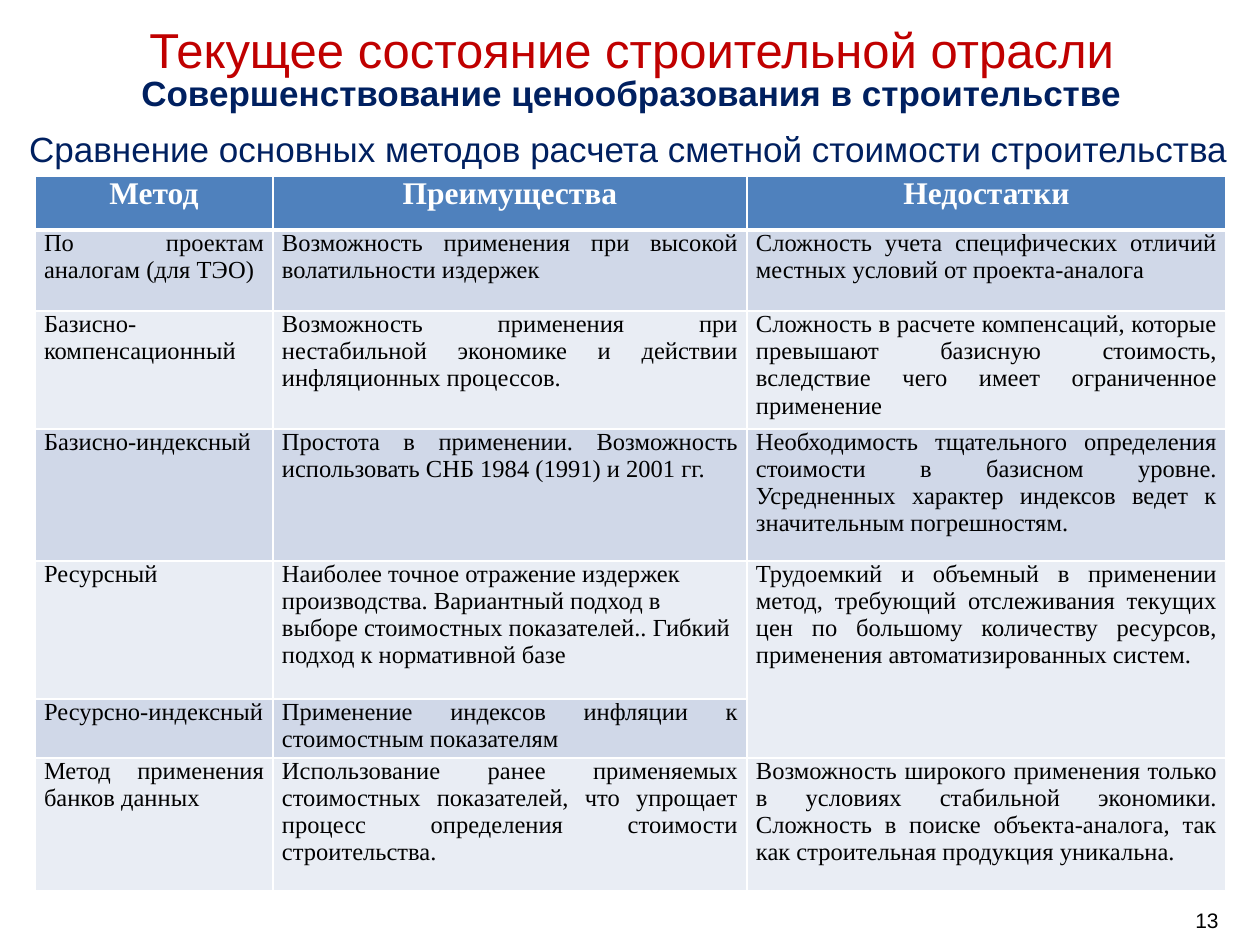
from lxml.etree import SubElement
from pptx import Presentation
from pptx.dml.color import RGBColor
from pptx.enum.text import MSO_ANCHOR, PP_ALIGN
from pptx.oxml.ns import qn
from pptx.util import Emu, Pt

SCALE = 914400 / 126  # EMU in one px

WHITE = RGBColor(0xFF, 0xFF, 0xFF)
BLACK = RGBColor(0x00, 0x00, 0x00)
RED = RGBColor(0xC0, 0x00, 0x00)
NAVY = RGBColor(0x00, 0x20, 0x60)
HEADER_BLUE = RGBColor(0x4F, 0x81, 0xBD)
BANDS = (RGBColor(0xE9, 0xED, 0xF4), RGBColor(0xD0, 0xD8, 0xE8))

TITLE = {"name": "Arial", "size": Pt(28), "bold": False, "color": RED}
SUBTITLE = {"name": "Arial", "size": Pt(20), "bold": True, "color": NAVY}
CAPTION = {**SUBTITLE, "bold": False}
NUMBER = {"name": "Arial", "size": Pt(12), "bold": False, "color": BLACK}
HEADER = {"name": "Times New Roman", "size": Pt(18), "bold": True, "color": WHITE}
BODY = {"name": "Times New Roman", "size": Pt(14), "bold": False, "color": BLACK}

COLUMN_WIDTHS = (238, 474, 479)
ROW_HEIGHTS = (54, 81, 118, 132, 138, 59, 133)
ROWS = (
    ("Метод", "Преимущества", "Недостатки"),
    ("По проектам аналогам (для ТЭО)",
     "Возможность применения при высокой волатильности издержек",
     "Сложность учета специфических отличий местных условий от проекта-аналога"),
    ("Базисно- компенсационный",
     "Возможность применения при нестабильной экономике и действии "
     "инфляционных процессов.",
     "Сложность в расчете компенсаций, которые превышают базисную стоимость, "
     "вследствие чего имеет ограниченное применение"),
    ("Базисно-индексный",
     "Простота в применении. Возможность использовать СНБ 1984 (1991) и 2001 гг.",
     "Необходимость тщательного определения стоимости в базисном уровне. "
     "Усредненных характер индексов ведет к значительным погрешностям."),
    ("Ресурсный",
     "Наиболее точное отражение издержек производства. Вариантный подход в "
     "выборе стоимостных показателей.. Гибкий подход к нормативной базе",
     "Трудоемкий и объемный в применении метод, требующий отслеживания текущих "
     "цен по большому количеству ресурсов, применения автоматизированных систем."),
    ("Ресурсно-индексный",
     "Применение индексов инфляции к стоимостным показателям",
     ""),
    ("Метод применения банков данных",
     "Использование ранее применяемых стоимостных показателей, что упрощает "
     "процесс определения стоимости строительства.",
     "Возможность широкого применения только в условиях стабильной экономики. "
     "Сложность в поиске объекта-аналога, так как строительная продукция уникальна."),
)
RESOURCE_ROW = 4
LEFT_ALIGNED_CELL = (RESOURCE_ROW, 1)


def px(value):
    return Emu(round(value * SCALE))


def write(paragraph, text, style, alignment):
    paragraph.alignment = alignment
    run = paragraph.add_run()
    run.text = text
    for name, value in style.items():
        if name == "color":
            run.font.color.rgb = value
        else:
            setattr(run.font, name, value)


def add_text(slide, box, text, style, alignment=PP_ALIGN.CENTER, anchor=MSO_ANCHOR.TOP):
    shape = slide.shapes.add_textbox(*map(px, box))
    frame = shape.text_frame
    frame.word_wrap = True
    frame.vertical_anchor = anchor
    write(frame.paragraphs[0], text, style, alignment)


def set_borders(cell, widths):
    properties = cell._tc.get_or_add_tcPr()
    for index, (side, width) in enumerate(widths.items()):
        line = SubElement(properties, qn(f"a:ln{side}"), w=str(Pt(width)))
        fill = SubElement(line, qn("a:solidFill"))
        SubElement(fill, qn("a:srgbClr"), val=str(WHITE))
        properties.insert(index, line)  # borders come before the fill


def format_cell(cell, row, column, text):
    margins = {"margin_left": px(9), "margin_right": px(9),
               "margin_top": 0, "margin_bottom": 0}
    for name, value in margins.items():
        setattr(cell, name, value)
    cell.fill.solid()
    cell.fill.fore_color.rgb = BANDS[row % 2] if row else HEADER_BLUE
    set_borders(cell, {"L": 1, "R": 1,
                       "T": 3 if row == 1 else 1, "B": 1 if row else 3})
    if row == 0:
        alignment = PP_ALIGN.CENTER
    elif (row, column) == LEFT_ALIGNED_CELL:
        alignment = PP_ALIGN.LEFT
    else:
        alignment = PP_ALIGN.JUSTIFY
    if text:
        write(cell.text_frame.paragraphs[0], text, BODY if row else HEADER, alignment)


def add_methods_table(slide, left, top):
    size = (sum(COLUMN_WIDTHS), sum(ROW_HEIGHTS))
    table = slide.shapes.add_table(len(ROWS), len(COLUMN_WIDTHS),
                                   *map(px, (left, top, *size))).table
    for column, width in zip(table.columns, COLUMN_WIDTHS):
        column.width = px(width)
    for row, height in zip(table.rows, ROW_HEIGHTS):
        row.height = px(height)
    for row, texts in enumerate(ROWS):
        for column, text in enumerate(texts):
            format_cell(table.cell(row, column), row, column, text)
    # Both resource methods share one drawback
    table.cell(RESOURCE_ROW, 2).merge(table.cell(RESOURCE_ROW + 1, 2))


def main():
    presentation = Presentation()
    presentation.slide_width = px(1260)
    presentation.slide_height = px(945)
    slide = presentation.slides.add_slide(presentation.slide_layouts[6])

    # Slide number
    add_text(slide, (937, 895, 294, 50), "13", NUMBER, PP_ALIGN.RIGHT, MSO_ANCHOR.MIDDLE)

    # Headings
    add_text(slide, (19, 65, 1225, 55),
             "Совершенствование ценообразования в строительстве", SUBTITLE)
    add_text(slide, (25, 3, 1213, 92), "Текущее состояние строительной отрасли",
             TITLE, anchor=MSO_ANCHOR.MIDDLE)
    add_text(slide, (16, 121, 1225, 55),
             "Сравнение основных методов расчета сметной стоимости строительства", CAPTION)

    # Comparison of the methods
    add_methods_table(slide, 35, 176)

    presentation.save("out.pptx")


if __name__ == "__main__":
    main()
